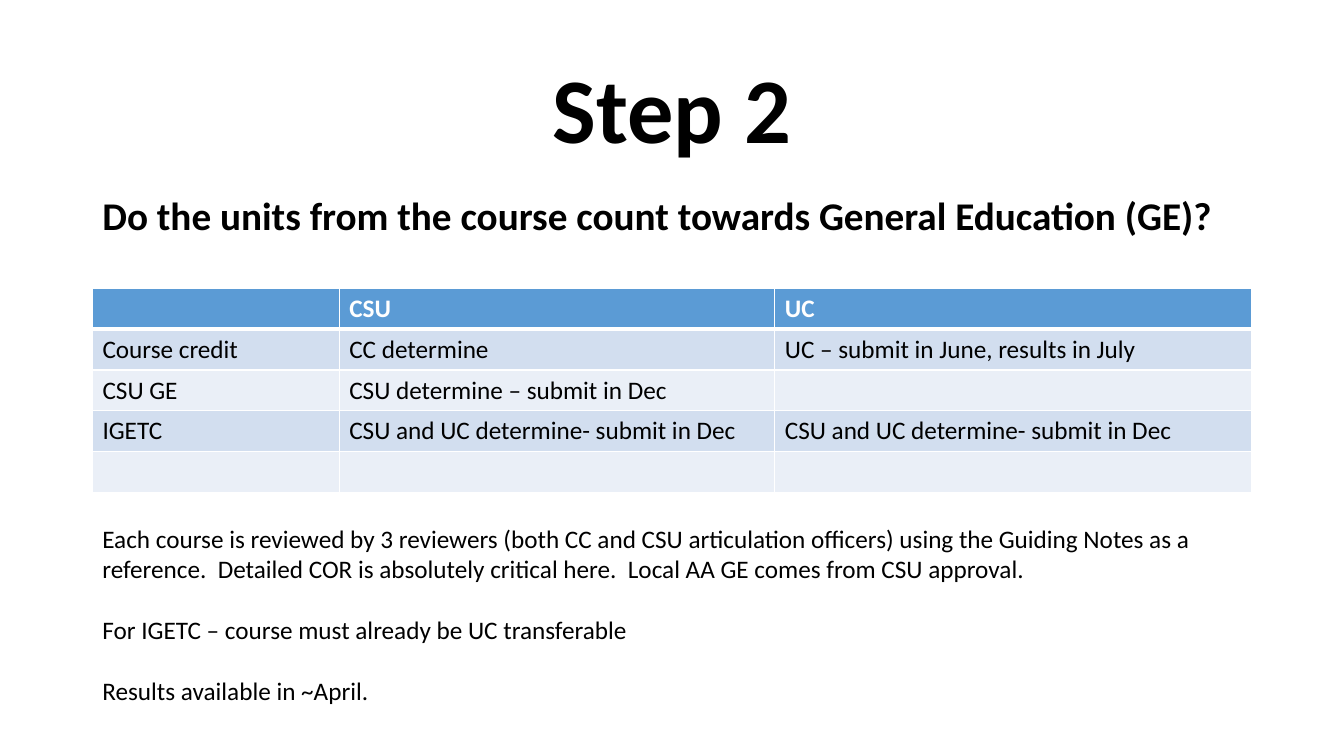
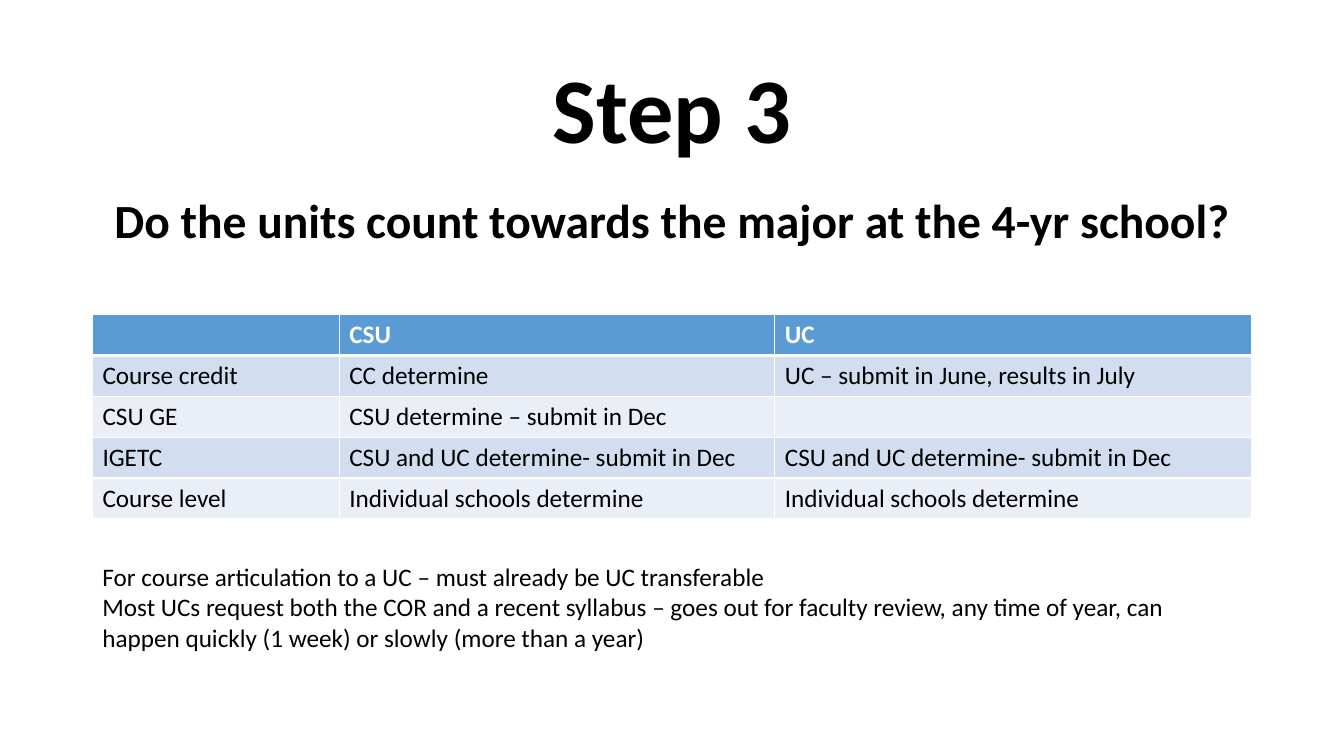
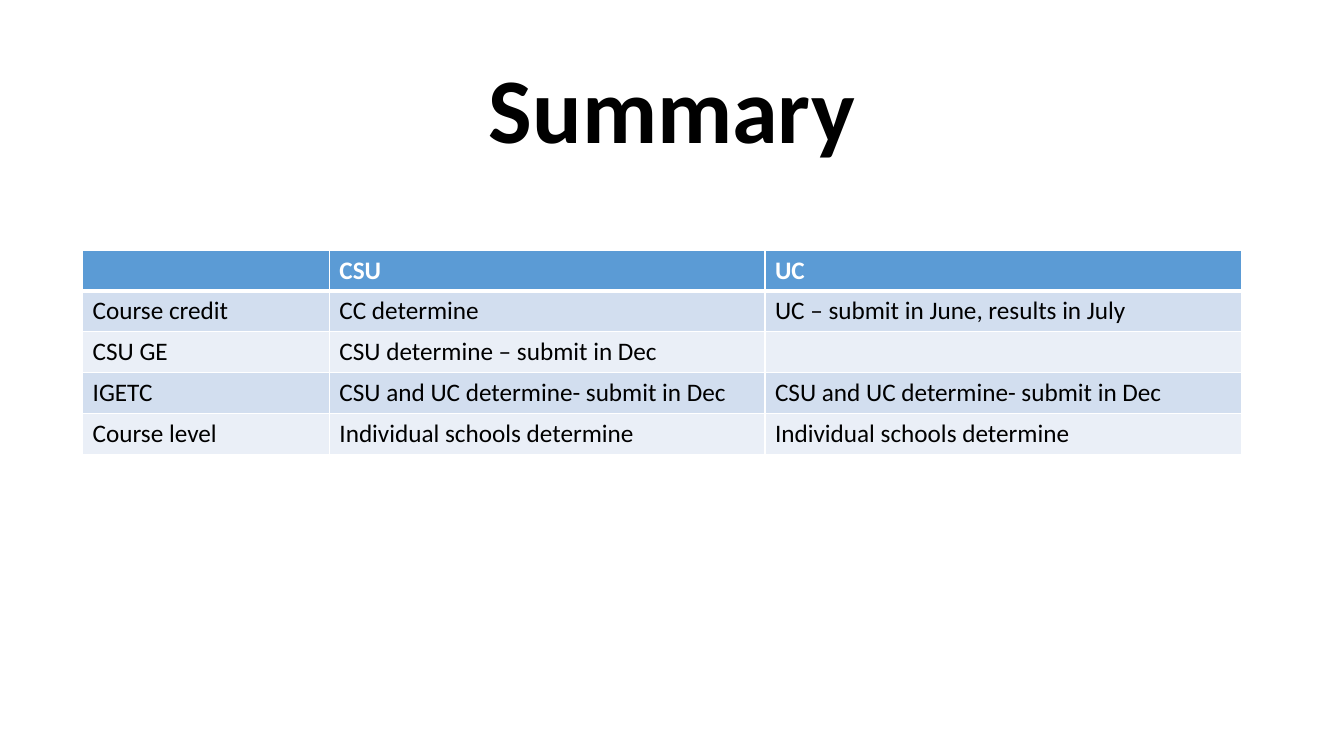
from lxml import etree
from pptx import Presentation
from pptx.dml.color import RGBColor
from pptx.enum.text import MSO_ANCHOR, MSO_AUTO_SIZE, PP_ALIGN
from pptx.oxml.ns import qn
from pptx.util import Inches, Pt

LEFT, CENTER = PP_ALIGN.LEFT, PP_ALIGN.CENTER
MIDDLE = MSO_ANCHOR.MIDDLE
NO_FIT = MSO_AUTO_SIZE.NONE

COLORS = {
    "text": "000000",
    "white": "FFFFFF",
    "header": "5B9BD5",
    "band_dark": "D2DEEF",
    "band_light": "EAEFF7",
}
FONT = "Calibri"
BODY_SIZE = 18
LINE_HEIGHT = 22

# Places are percentages of the slide's width and height
MARGIN, CONTENT_WIDTH = 6.88, 86.25
TITLE_TOP, TITLE_HEIGHT = 5.33, 19.33
QUESTION_TOP = TITLE_TOP + TITLE_HEIGHT
COLUMN_WIDTHS = (18.36, 32.41, 35.48)
ROW_HEIGHT = 5.41

HEADER_ROW = ("", "CSU", "UC")
CREDIT_ROWS = [
    HEADER_ROW,
    ("Course credit", "CC determine", "UC – submit in June, results in July"),
    ("CSU GE", "CSU determine – submit in Dec", ""),
    ("IGETC",) + ("CSU and UC determine- submit in Dec",) * 2,
]
OPEN_ROWS = CREDIT_ROWS + [("", "", "")]
FULL_ROWS = CREDIT_ROWS + [("Course level",) + ("Individual schools determine",) * 2]


class Deck:
    """Holds the shared style and the slide being filled."""

    def __init__(self):
        self.presentation = Presentation()
        self.presentation.slide_width = Inches(13.33)
        self.presentation.slide_height = Inches(7.5)
        self.slide = None

    def x(self, share):
        return round(self.presentation.slide_width * share / 100)

    def y(self, share):
        return round(self.presentation.slide_height * share / 100)

    def style(self, paragraph, size, bold=False, color="text", align=LEFT):
        paragraph.alignment = align
        font = paragraph.font
        font.name, font.size, font.bold = FONT, Pt(size), bold
        font.color.rgb = RGBColor.from_string(COLORS[color])

    def add_slide(self, title):
        layout = self.presentation.slide_layouts.get_by_name("Title Only")
        self.slide = self.presentation.slides.add_slide(layout)
        shape = self.slide.shapes.title
        shape.left, shape.top = self.x(MARGIN), self.y(TITLE_TOP)
        shape.width, shape.height = self.x(CONTENT_WIDTH), self.y(TITLE_HEIGHT)
        frame = shape.text_frame
        frame.text = title
        frame.vertical_anchor, frame.auto_size = MIDDLE, NO_FIT
        paragraph = frame.paragraphs[0]
        paragraph.line_spacing = 0.9
        self.style(paragraph, 66, bold=True, align=CENTER)

    def add_text(self, top, height, lines, size=BODY_SIZE, bold=False, align=LEFT, gap=0):
        box = self.slide.shapes.add_textbox(
            self.x(MARGIN), self.y(top), self.x(CONTENT_WIDTH), self.y(height))
        frame = box.text_frame
        frame.word_wrap = True
        for index, line in enumerate(lines):
            paragraph = frame.add_paragraph() if index else frame.paragraphs[0]
            paragraph.text = line
            if index and gap:
                paragraph.space_before = Pt(gap)
            self.style(paragraph, size, bold, align=align)

    def add_question(self, text, height, size, align=LEFT):
        self.add_text(QUESTION_TOP, height, [text], size, bold=True, align=align)

    def add_borders(self, cell, top, bottom):
        properties = cell._tc.get_or_add_tcPr()
        for side, points in (("L", 1), ("R", 1), ("T", top), ("B", bottom)):
            line = etree.SubElement(properties, qn(f"a:ln{side}"), w=str(Pt(points)))
            fill = etree.SubElement(line, qn("a:solidFill"))
            etree.SubElement(fill, qn("a:srgbClr"), val=COLORS["white"])

    def add_table(self, top, rows, left=MARGIN):
        table = self.slide.shapes.add_table(
            len(rows), len(COLUMN_WIDTHS), self.x(left), self.y(top),
            self.x(CONTENT_WIDTH), self.y(ROW_HEIGHT * len(rows))).table
        for column, width in zip(table.columns, COLUMN_WIDTHS):
            column.width = self.x(width)
        for row_index, texts in enumerate(rows):
            table.rows[row_index].height = self.y(ROW_HEIGHT)
            is_header = row_index == 0
            band = "band_dark" if row_index % 2 else "band_light"
            for column_index, text in enumerate(texts):
                cell = table.cell(row_index, column_index)
                # The rule under the header is thicker than the others
                self.add_borders(cell, top=3 if row_index == 1 else 1,
                                 bottom=3 if is_header else 1)
                cell.fill.solid()
                cell.fill.fore_color.rgb = RGBColor.from_string(
                    COLORS["header" if is_header else band])
                cell.text = text
                self.style(cell.text_frame.paragraphs[0], BODY_SIZE, is_header,
                           "white" if is_header else "text")


def main():
    deck = Deck()

    # Step 2: general education
    deck.add_slide("Step 2")
    deck.add_table(38.13, OPEN_ROWS)
    deck.add_text(68.53, 25.6, [
        "Each course is reviewed by 3 reviewers (both CC and CSU articulation officers) "
        "using the Guiding Notes as a reference.  Detailed COR is absolutely critical "
        "here.  Local AA GE comes from CSU approval.",
        "For IGETC – course must already be UC transferable",
        "Results available in ~April.",
    ], gap=LINE_HEIGHT)
    deck.add_question(
        "Do the units from the course count towards General Education (GE)?", 7.6, 28)

    # Step 3: the major
    deck.add_slide("Step 3")
    deck.add_table(41.6, FULL_ROWS)
    deck.add_question(
        "Do the units count towards the major at the 4-yr school?", 8.93, 34, CENTER)
    deck.add_text(73.6, 13.47, [
        "For course articulation to a UC – must already be UC transferable",
        "Most UCs request both the COR and a recent syllabus – goes out for faculty "
        "review, any time of year, can happen quickly (1 week) or slowly (more than a year)",
    ])

    # Summary
    deck.add_slide("Summary")
    deck.add_table(33.07, FULL_ROWS, left=6.15)

    deck.presentation.save("out.pptx")


if __name__ == "__main__":
    main()
